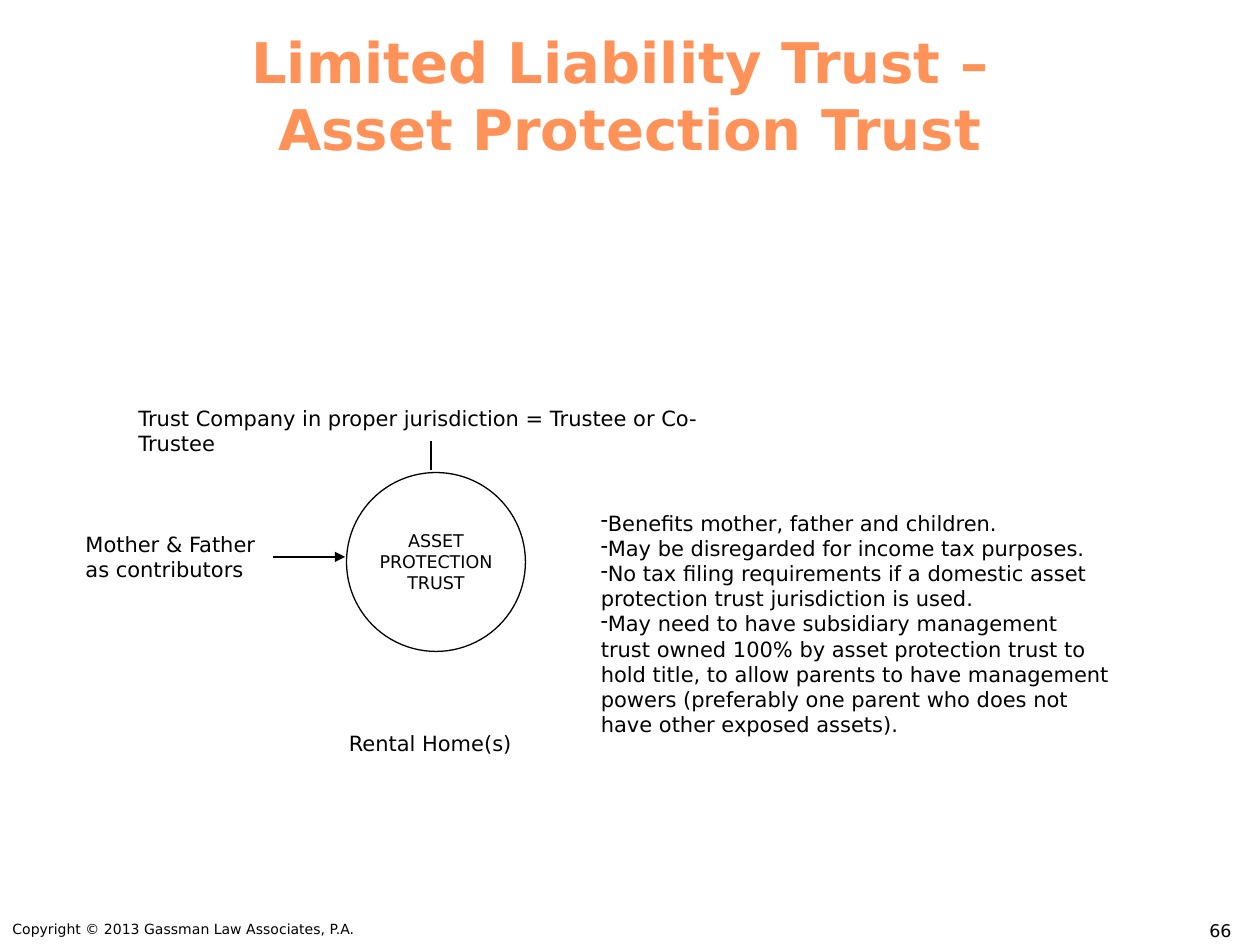
from dataclasses import dataclass

from lxml.etree import SubElement
from pptx import Presentation
from pptx.dml.color import RGBColor
from pptx.enum.shapes import MSO_CONNECTOR as Connector, MSO_SHAPE as Shape
from pptx.enum.text import MSO_ANCHOR as Anchor, PP_ALIGN as Align
from pptx.oxml.ns import qn
from pptx.util import Inches, Pt

FONT = "DejaVu Sans"
BLACK, WHITE, ORANGE = "000000", "FFFFFF", "FF9258"


@dataclass
class Label:
    left: float
    top: float
    width: float
    height: float
    lines: tuple[str, ...]
    size: float = 12
    color: str = BLACK
    bold: bool = False
    align: Align = Align.LEFT
    bullet: str = ""


@dataclass
class Link:
    start: tuple[float, float]
    end: tuple[float, float]
    arrow: bool = False


def rgb(color: str) -> RGBColor:
    return RGBColor.from_string(color)


def write(frame, label: Label) -> None:
    frame.word_wrap = True
    for i, line in enumerate(label.lines):
        paragraph = frame.add_paragraph() if i else frame.paragraphs[0]
        paragraph.text = line
        paragraph.alignment = label.align
        if label.bullet:
            properties = paragraph._p.get_or_add_pPr()
            properties.set("marL", "0")
            properties.set("indent", "0")
            SubElement(properties, qn("a:buChar"), char=label.bullet)
        font = paragraph.font
        font.name, font.size, font.bold = FONT, Pt(label.size), label.bold
        font.color.rgb = rgb(label.color)


def bounds(label: Label) -> list[Inches]:
    return [Inches(v) for v in (label.left, label.top, label.width, label.height)]


def add_label(slide, label: Label) -> None:
    write(slide.shapes.add_textbox(*bounds(label)).text_frame, label)


def add_circle(slide, label: Label) -> None:
    circle = slide.shapes.add_shape(Shape.OVAL, *bounds(label))
    circle.shadow.inherit = False
    circle.fill.solid()
    circle.fill.fore_color.rgb = rgb(WHITE)
    circle.line.color.rgb = rgb(BLACK)
    circle.line.width = Pt(0.75)
    frame = circle.text_frame
    frame.vertical_anchor = Anchor.MIDDLE
    frame.margin_left = frame.margin_right = Inches(0.04)
    frame.margin_top = frame.margin_bottom = Inches(0.03)
    write(frame, label)


def add_link(slide, link: Link) -> None:
    ends = [Inches(v) for v in (*link.start, *link.end)]
    connector = slide.shapes.add_connector(Connector.STRAIGHT, *ends)
    connector.line.color.rgb = rgb(BLACK)
    connector.line.width = Pt(0.75)
    if link.arrow:
        SubElement(connector.line._get_or_add_ln(), qn("a:tailEnd"), type="triangle")
    SubElement(connector._element.spPr, qn("a:effectLst"))


TRUST = Label(2.75, 3.75, 1.42, 1.42, ("ASSET PROTECTION TRUST",), 10, align=Align.CENTER)

LINKS = (
    Link((2.17, 4.42), (2.74, 4.42), arrow=True),  # contributors to trust
    Link((3.42, 3.5), (3.42, 3.73)),  # trustee to trust
)

LABELS = (
    # Parties and property
    Label(1, 3.17, 4.75, 0.3,
          ("Trust Company in proper jurisdiction = Trustee or Co-Trustee",)),
    Label(0.58, 4.17, 1.67, 0.51, ("Mother & Father as contributors",)),
    Label(2.67, 5.75, 1.67, 0.3, ("Rental Home(s)",)),
    # Features of the trust
    Label(4.67, 4, 4.25, 1.72, (
        "Benefits mother, father and children.",
        "May be disregarded for income tax purposes.",
        "No tax filing requirements if a domestic asset protection trust "
        "jurisdiction is used.",
        "May need to have subsidiary management trust owned 100% by asset "
        "protection trust to hold title, to allow parents to have management "
        "powers (preferably one parent who does not have other exposed assets).",
    ), bullet="-"),
    # Title
    Label(0, 0.17, 10, 1.25, ("Limited Liability Trust – ", "Asset Protection Trust"),
          32, ORANGE, True, Align.CENTER),
    # Footer
    Label(9.5, 7.25, 0.5, 0.25, ("66",), 10),
    Label(0, 7.26, 8.58, 0.24, ("Copyright © 2013 Gassman Law Associates, P.A.",), 8),
)


def main() -> None:
    deck = Presentation()
    deck.slide_width, deck.slide_height = Inches(10), Inches(7.5)
    slide = deck.slides.add_slide(deck.slide_layouts[6])
    add_circle(slide, TRUST)
    for link in LINKS:
        add_link(slide, link)
    for label in LABELS:
        add_label(slide, label)
    deck.save("out.pptx")


if __name__ == "__main__":
    main()
